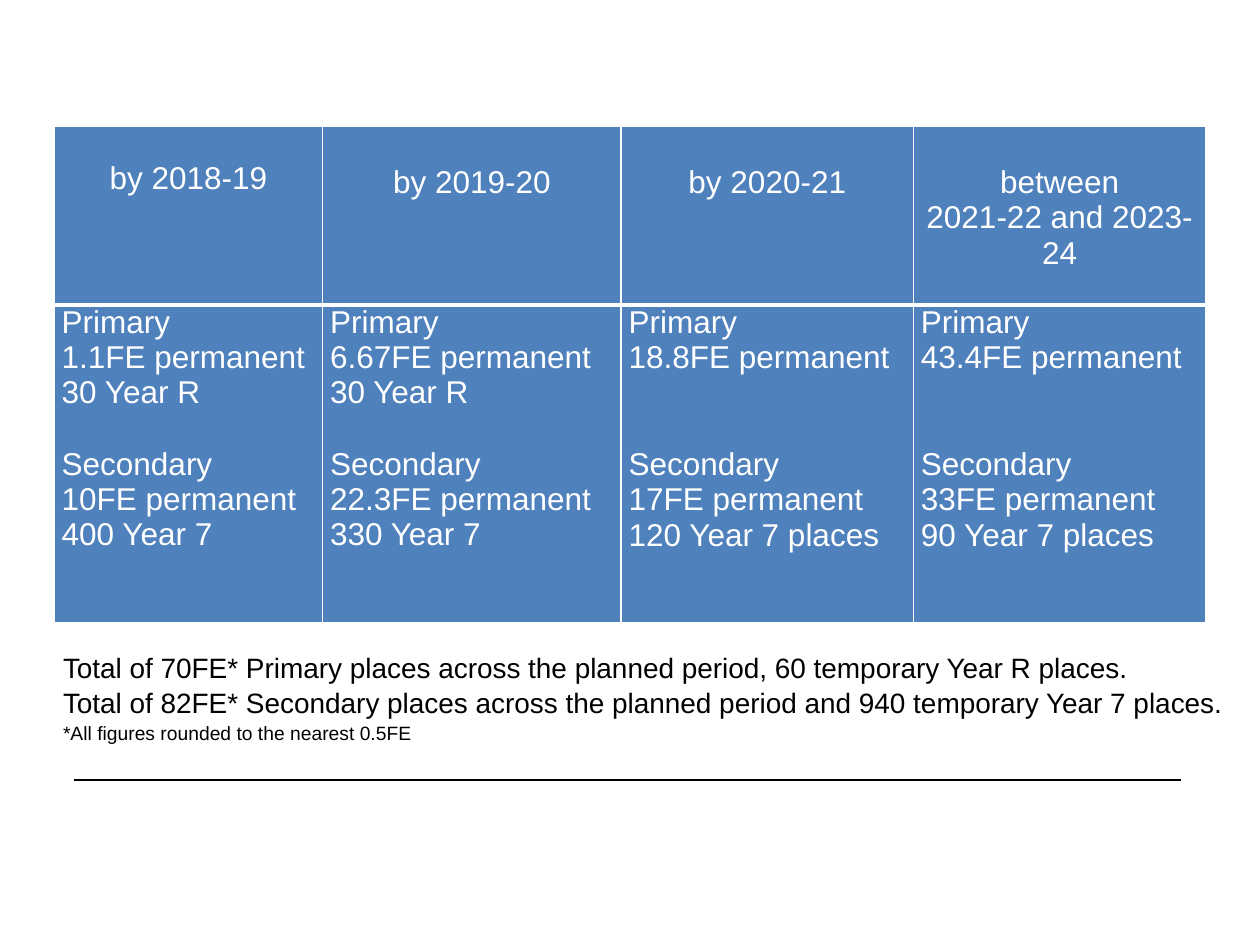
from lxml.etree import SubElement
from pptx import Presentation
from pptx.dml.color import RGBColor
from pptx.enum.shapes import MSO_CONNECTOR
from pptx.enum.text import MSO_ANCHOR, MSO_AUTO_SIZE, PP_ALIGN
from pptx.oxml.ns import qn
from pptx.util import Inches, Pt

WHITE = RGBColor(0xFF, 0xFF, 0xFF)
BLACK = RGBColor(0, 0, 0)
BLUE = RGBColor(0x4F, 0x81, 0xBD)
FONT = "Arial"

COLUMN_WIDTHS = [2.13, 2.37, 2.32, 2.32]
ROW_HEIGHTS = [1.42, 2.52]
PRIMARY_SLOTS = 4  # lines reserved above "Secondary", including a gap
BLANK_LINE = 20.5

# Heading lines, heading inset, primary lines, secondary lines
PERIODS = [
    (["by 2018-19"], 0.28,
     ["Primary", "1.1FE permanent", "30 Year R"],
     ["Secondary", "10FE permanent", "400 Year 7"]),
    (["by 2019-20"], 0.31,
     ["Primary", "6.67FE permanent", "30 Year R"],
     ["Secondary", "22.3FE permanent", "330 Year 7"]),
    (["by 2020-21"], 0.31,
     ["Primary", "18.8FE permanent"],
     ["Secondary", "17FE permanent", "120 Year 7 places"]),
    (["between", "2021-22 and 2023-24"], 0.31,
     ["Primary", "43.4FE permanent"],
     ["Secondary", "33FE permanent", "90 Year 7 places"]),
]
TOTALS = [
    ("Total of 70FE* Primary places across the planned period, "
     "60 temporary Year R places.", 16),
    ("Total of 82FE* Secondary places across the planned period and "
     "940 temporary Year 7 places.", 16),
    ("*All figures rounded to the nearest 0.5FE", 11),
]


def write_lines(frame, lines, color, align=PP_ALIGN.LEFT):
    """Fill a text frame from (text, size, space before) lines."""
    for index, (text, size, space) in enumerate(lines):
        para = frame.paragraphs[0] if index == 0 else frame.add_paragraph()
        para.text = text
        para.alignment = align
        para.space_before = Pt(space)
        para.font.name = FONT
        para.font.size = Pt(size)
        para.font.color.rgb = color


def set_borders(cell, **widths):
    """Draw white borders; widths are points keyed by side: L, R, T, B."""
    properties = cell._tc.get_or_add_tcPr()
    for index, (side, width) in enumerate(widths.items()):
        line = SubElement(properties, qn(f"a:ln{side}"), w=str(Pt(width)))
        fill = SubElement(line, qn("a:solidFill"))
        SubElement(fill, qn("a:srgbClr"), val=str(WHITE))
        properties.insert(index, line)


def style_cell(cell, top_inset, top_border, bottom_border):
    cell.margin_left = cell.margin_right = Inches(0.06)
    cell.margin_top = Inches(top_inset)
    cell.margin_bottom = 0
    cell.fill.solid()
    cell.fill.fore_color.rgb = BLUE
    set_borders(cell, L=1, R=1, T=top_border, B=bottom_border)


def add_places_table(slide):
    table = slide.shapes.add_table(
        len(ROW_HEIGHTS), len(PERIODS), Inches(0.43), Inches(1),
        Inches(sum(COLUMN_WIDTHS)), Inches(sum(ROW_HEIGHTS))).table
    for column, width in zip(table.columns, COLUMN_WIDTHS):
        column.width = Inches(width)
    for row, height in zip(table.rows, ROW_HEIGHTS):
        row.height = Inches(height)
    for index, (heading, inset, primary, secondary) in enumerate(PERIODS):
        head, body = table.cell(0, index), table.cell(1, index)
        style_cell(head, inset, 1, 3)
        write_lines(head.text_frame, [(text, 18, 0) for text in heading],
                    WHITE, PP_ALIGN.CENTER)
        style_cell(body, 0, 3, 1)
        gap = BLANK_LINE * (PRIMARY_SLOTS - len(primary))
        lines = [(text, 18, 0) for text in primary + secondary]
        lines[len(primary)] = (secondary[0], 18, gap)
        write_lines(body.text_frame, lines, WHITE)


def fill_totals(box):
    box.left, box.top = Inches(0.43), Inches(5.12)
    box.width, box.height = Inches(9.79), Inches(1.02)
    frame = box.text_frame
    frame.word_wrap = True
    frame.auto_size = MSO_AUTO_SIZE.NONE
    frame.vertical_anchor = MSO_ANCHOR.TOP
    frame.margin_left = frame.margin_right = Inches(0.07)
    frame.margin_top = frame.margin_bottom = Inches(0.04)
    write_lines(frame, [(text, size, 1 if index else 0)
                        for index, (text, size) in enumerate(TOTALS)], BLACK)


def add_rule(slide):
    rule = slide.shapes.add_connector(
        MSO_CONNECTOR.STRAIGHT, Inches(0.59), Inches(6.19),
        Inches(9.37), Inches(6.19))
    rule.line.color.rgb = BLACK
    rule.line.width = Pt(1)
    SubElement(rule._element.spPr, qn("a:effectLst"))


def main():
    deck = Presentation()
    deck.slide_width, deck.slide_height = Inches(10), Inches(7.5)
    slide = deck.slides.add_slide(deck.slide_layouts[0])
    title = slide.shapes.title._element
    title.getparent().remove(title)
    add_rule(slide)
    add_places_table(slide)
    fill_totals(slide.placeholders[1])
    deck.save("out.pptx")


if __name__ == "__main__":
    main()
